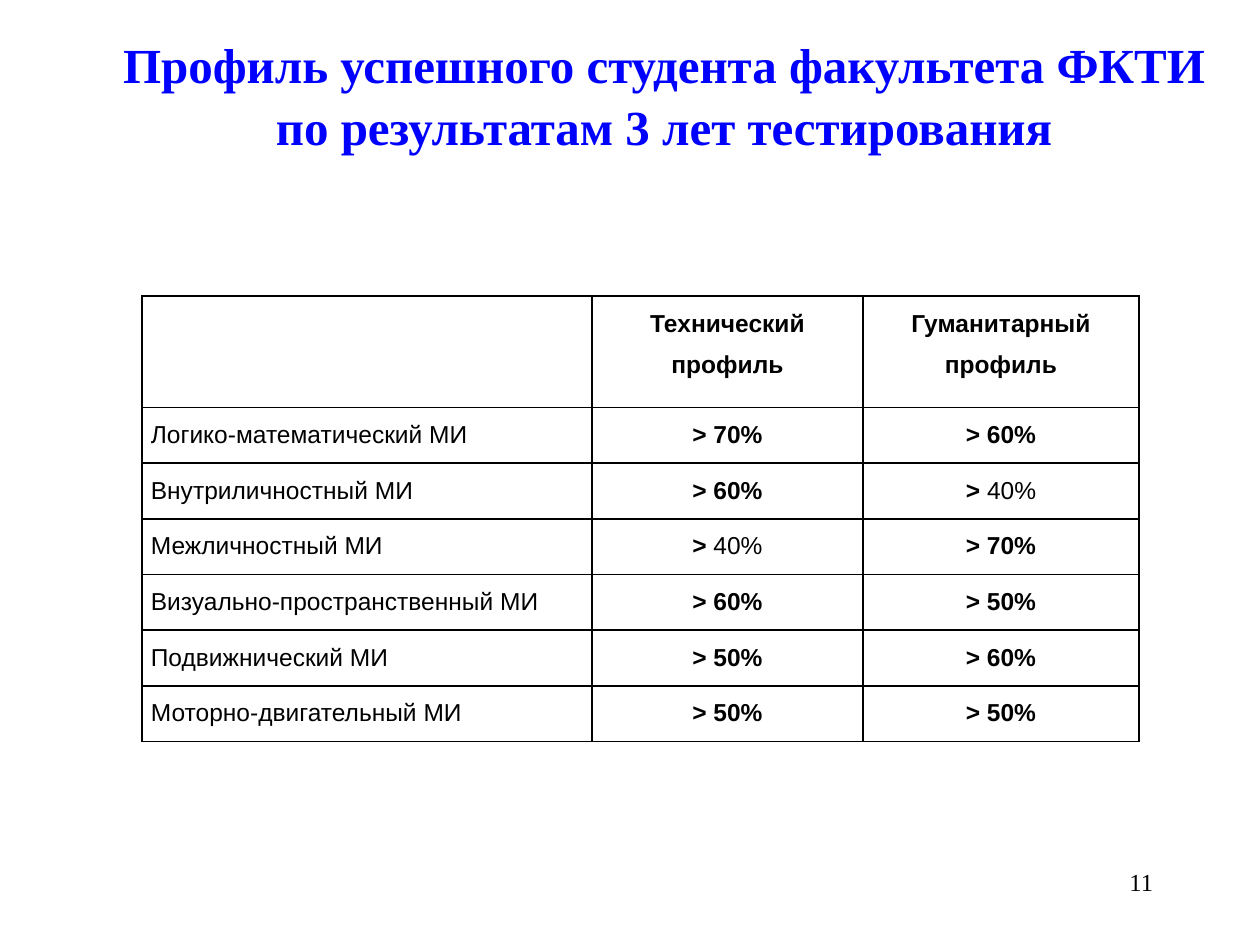
from typing import NamedTuple

from lxml import etree
from pptx import Presentation
from pptx import util as u
from pptx.dml.color import RGBColor
from pptx.enum import text
from pptx.oxml.ns import qn

Pt = u.Pt
ALIGN = text.PP_ALIGN
BLACK, WHITE, BLUE = "000000", "FFFFFF", "0000FF"


class Style(NamedTuple):
    face: str
    size: float
    tint: str
    align: ALIGN
    space: float = 1.0
    bold: bool = False


class Label(NamedTuple):
    lines: list[str]
    box: tuple[float, float, float, float]
    style: Style


class Trait(NamedTuple):
    name: str
    tech: int
    human: int


TITLE = Style("Times New Roman", 28, BLUE, ALIGN.CENTER, 1.05, True)
PAGE = Style("Times New Roman", 14, BLACK, ALIGN.RIGHT)
NAME = Style("Arial", 14, BLACK, ALIGN.LEFT, 1.5)
VALUE = NAME._replace(align=ALIGN.CENTER, bold=True)

LABELS = [
    Label(["Профиль успешного студента факультета ФКТИ",
           "по результатам 3 лет тестирования"], (54, 14.4, 650.88, 126.72), TITLE),
    Label(["11"], (516.24, 491.76, 149.76, 36), PAGE),
]
HEADS = ["", "Технический профиль", "Гуманитарный профиль"]
TRAITS = [
    Trait("Логико-математический МИ", 70, 60),
    Trait("Внутриличностный МИ", 60, 40),
    Trait("Межличностный МИ", 40, 70),
    Trait("Визуально-пространственный МИ", 60, 50),
    Trait("Подвижнический МИ", 50, 60),
    Trait("Моторно-двигательный МИ", 50, 50),
]
COLS = [257, 155, 157.6]
ROWS = [63.6] + [31.85] * len(TRAITS)
LEFT, TOP = 81.2, 169.2
STRONG = 50  # values from here up are bold


def paint(hue: str) -> RGBColor:
    return RGBColor.from_string(hue)


def apply(item, **vals) -> None:
    for key, val in vals.items():
        setattr(item, key, val)


def write(para, parts: list[tuple[str, bool]], style: Style) -> None:
    """Fill a paragraph with (words, bold) runs."""
    apply(para, alignment=style.align, line_spacing=style.space)
    for words, bold in parts:
        run = para.add_run()
        run.text = words
        apply(run.font, name=style.face, size=Pt(style.size), bold=bold)
        run.font.color.rgb = paint(style.tint)


def add_label(slide, label: Label) -> None:
    frame = slide.shapes.add_textbox(*map(Pt, label.box)).text_frame
    frame.word_wrap = True
    for i, line in enumerate(label.lines):
        para = frame.add_paragraph() if i else frame.paragraphs[0]
        write(para, [(line, label.style.bold)], label.style)


def add_edges(cell) -> None:
    props = cell._tc.get_or_add_tcPr()
    for i, side in enumerate(("lnL", "lnR", "lnT", "lnB")):
        line = etree.Element(qn(f"a:{side}"), w=str(Pt(1)))
        fill = etree.SubElement(line, qn("a:solidFill"))
        etree.SubElement(fill, qn("a:srgbClr"), val=BLACK)
        props.insert(i, line)


def add_cell(cell, parts: list[tuple[str, bool]], style: Style) -> None:
    apply(cell, margin_left=Pt(5), margin_right=Pt(5), margin_top=0, margin_bottom=0)
    cell.fill.solid()
    cell.fill.fore_color.rgb = paint(WHITE)
    add_edges(cell)
    write(cell.text_frame.paragraphs[0], parts, style)


def score(value: int) -> list[tuple[str, bool]]:
    if value >= STRONG:
        return [(f"> {value}%", True)]
    return [("> ", True), (f"{value}%", False)]


def add_grid(slide) -> None:
    area = map(Pt, (LEFT, TOP, sum(COLS), sum(ROWS)))
    table = slide.shapes.add_table(len(ROWS), len(COLS), *area).table
    apply(table, first_row=False, horz_banding=False)
    for col, width in zip(table.columns, COLS):
        col.width = Pt(width)
    for row, height in zip(table.rows, ROWS):
        row.height = Pt(height)
    for c, head in enumerate(HEADS):
        add_cell(table.cell(0, c), [(head, True)] if head else [], VALUE)
    for r, trait in enumerate(TRAITS, 1):
        add_cell(table.cell(r, 0), [(trait.name, False)], NAME)
        for c, value in enumerate((trait.tech, trait.human), 1):
            add_cell(table.cell(r, c), score(value), VALUE)


def main() -> None:
    deck = Presentation()
    apply(deck, slide_width=Pt(720), slide_height=Pt(540))
    slide = deck.slides.add_slide(deck.slide_layouts[6])
    for label in LABELS:
        add_label(slide, label)
    add_grid(slide)
    deck.save("out.pptx")


if __name__ == "__main__":
    main()
